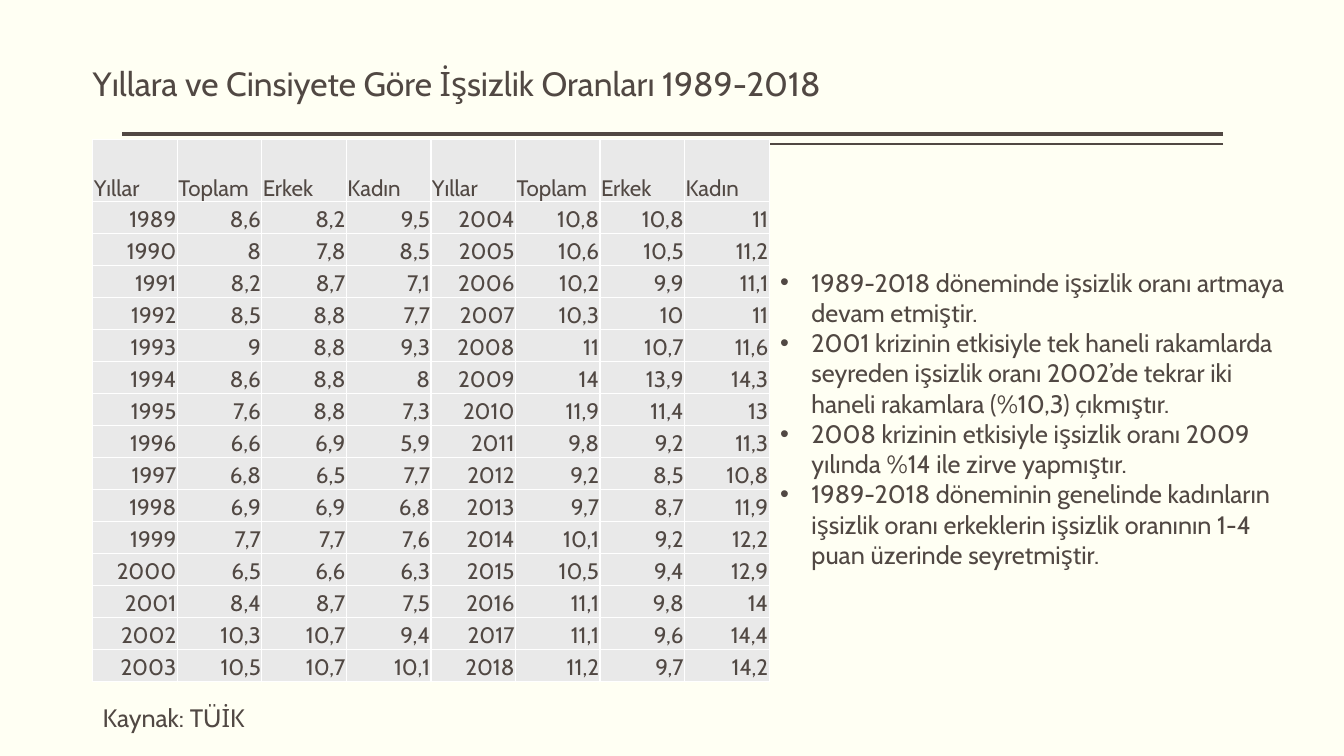
from dataclasses import dataclass

from lxml import etree
from pptx import Presentation
from pptx import util as u
from pptx.dml.color import RGBColor
from pptx.enum import shapes, text
from pptx.oxml import ns


@dataclass(frozen=True)
class Theme:
    font: str = "Cabin"
    background: RGBColor = RGBColor(0xFF, 0xFF, 0xF3)
    ink: RGBColor = RGBColor(0x51, 0x48, 0x43)
    cell: RGBColor = RGBColor(0xE9, 0xE9, 0xE9)
    border: str = "FFFFFF"
    title_size: int = 24
    body_size: int = 18
    table_size: int = 16


THEME = Theme()

TITLE = "Yıllara ve Cinsiyete Göre İşsizlik Oranları 1989-2018"
SOURCE = "Kaynak: TÜİK"
FINDINGS = [
    "1989-2018 döneminde işsizlik oranı artmaya devam etmiştir.",
    "2001 krizinin etkisiyle tek haneli rakamlarda seyreden işsizlik oranı "
    "2002’de tekrar iki haneli rakamlara (%10,3) çıkmıştır.",
    "2008 krizinin etkisiyle işsizlik oranı 2009 yılında %14 ile zirve yapmıştır.",
    "1989-2018 döneminin genelinde kadınların işsizlik oranı erkeklerin işsizlik "
    "oranının 1-4 puan üzerinde seyretmiştir.",
]

HEADINGS = ["Yıllar", "Toplam", "Erkek", "Kadın"]
FIRST_YEAR = 1989
# Total, men and women, one tuple per year from FIRST_YEAR on
RATES = [
    (8.6, 8.2, 9.5), (8, 7.8, 8.5), (8.2, 8.7, 7.1), (8.5, 8.8, 7.7), (9, 8.8, 9.3),
    (8.6, 8.8, 8), (7.6, 8.8, 7.3), (6.6, 6.9, 5.9), (6.8, 6.5, 7.7), (6.9, 6.9, 6.8),
    (7.7, 7.7, 7.6), (6.5, 6.6, 6.3), (8.4, 8.7, 7.5), (10.3, 10.7, 9.4), (10.5, 10.7, 10.1),
    (10.8, 10.8, 11), (10.6, 10.5, 11.2), (10.2, 9.9, 11.1), (10.3, 10, 11), (11, 10.7, 11.6),
    (14, 13.9, 14.3), (11.9, 11.4, 13), (9.8, 9.2, 11.3), (9.2, 8.5, 10.8), (9.7, 8.7, 11.9),
    (10.1, 9.2, 12.2), (10.5, 9.4, 12.9), (11.1, 9.8, 14), (11.1, 9.6, 14.4), (11.2, 9.7, 14.2),
]


def set_all(target, formats):
    for attribute, value in formats.items():
        setattr(target, attribute, value)


def write(paragraph, content, size):
    run = paragraph.add_run()
    run.text = content
    set_all(run.font, {"name": THEME.font, "size": u.Pt(size)})
    run.font.color.rgb = THEME.ink


def add_text(slide, box, paragraphs, size, formats=None):
    frame = slide.shapes.add_textbox(*map(u.Inches, box)).text_frame
    set_all(frame, {"word_wrap": True, **(formats or {})})
    for index, content in enumerate(paragraphs):
        paragraph = frame.add_paragraph() if index else frame.paragraphs[0]
        write(paragraph, content, size)
    return frame


def add_bullets(frame):
    indent = u.Inches(0.31)
    for paragraph in frame.paragraphs:
        properties = paragraph._p.get_or_add_pPr()
        properties.set("marL", str(indent))
        properties.set("indent", str(-indent))
        etree.SubElement(properties, ns.qn("a:buFont"), typeface="Arial")
        etree.SubElement(properties, ns.qn("a:buChar"), char="•")


def add_rule(slide, y, weight):
    rule = slide.shapes.add_connector(
        shapes.MSO_CONNECTOR.STRAIGHT,
        u.Inches(12.13), u.Inches(y), u.Inches(1.21), u.Inches(y))
    rule.line.width = u.Pt(weight)
    rule.line.color.rgb = THEME.ink
    etree.SubElement(rule._element.spPr, ns.qn("a:effectLst"))


def add_borders(cell):
    properties = cell._tc.get_or_add_tcPr()
    for side in ("lnL", "lnR", "lnT", "lnB"):
        border = etree.SubElement(properties, ns.qn(f"a:{side}"), w=str(u.Pt(1)))
        fill = etree.SubElement(border, ns.qn("a:solidFill"))
        etree.SubElement(fill, ns.qn("a:srgbClr"), val=THEME.border)


def fill_cell(cell, content, alignment):
    edge = u.Inches(0.01)
    set_all(cell, {
        "margin_left": edge, "margin_right": edge, "margin_top": edge,
        "margin_bottom": 0, "vertical_anchor": text.MSO_ANCHOR.BOTTOM})
    add_borders(cell)
    cell.fill.solid()
    cell.fill.fore_color.rgb = THEME.cell
    paragraph = cell.text_frame.paragraphs[0]
    paragraph.alignment = alignment
    write(paragraph, content, THEME.table_size)


def rate_rows():
    """Headings, then the earlier and later half of the years side by side."""
    years = [[str(year), *(str(rate).replace(".", ",") for rate in rates)]
             for year, rates in enumerate(RATES, FIRST_YEAR)]
    half = len(years) // 2
    return [HEADINGS * 2] + [a + b for a, b in zip(years[:half], years[half:])]


def add_rate_table(slide, box, heading_height):
    rows = rate_rows()
    left, top, width, height = map(u.Inches, box)
    heading = u.Inches(heading_height)
    table = slide.shapes.add_table(
        len(rows), len(rows[0]), left, top, width, height).table
    set_all(table, {"first_row": False, "horz_banding": False})
    for column in table.columns:
        column.width = width // len(rows[0])
    for index, contents in enumerate(rows):
        table.rows[index].height = (
            (height - heading) // (len(rows) - 1) if index else heading)
        alignment = text.PP_ALIGN.RIGHT if index else text.PP_ALIGN.LEFT
        for cell, content in zip(table.rows[index].cells, contents):
            fill_cell(cell, content, alignment)


def main():
    deck = Presentation()
    set_all(deck, {"slide_width": u.Inches(13.33), "slide_height": u.Inches(7.5)})
    slide = deck.slides.add_slide(deck.slide_layouts[6])
    slide.background.fill.solid()
    slide.background.fill.fore_color.rgb = THEME.background

    # Double rule and title
    add_rule(slide, 1.33, 3)
    add_rule(slide, 1.43, 1)
    title = add_text(
        slide, (0.92, 0.4, 11.5, 0.68), [TITLE], THEME.title_size,
        {"margin_left": 0, "margin_right": 0,
         "vertical_anchor": text.MSO_ANCHOR.BOTTOM})
    title.paragraphs[0].line_spacing = 0.9

    # Unemployment rates and their source
    add_rate_table(slide, (0.92, 1.38, 6.71, 5.38), 0.62)
    add_text(slide, (0.92, 6.92, 6.72, 0.4), [SOURCE], THEME.body_size)

    # Findings
    findings = add_text(slide, (7.64, 2.6, 5.32, 3.13), FINDINGS, THEME.body_size)
    add_bullets(findings)

    deck.save("out.pptx")


if __name__ == "__main__":
    main()
